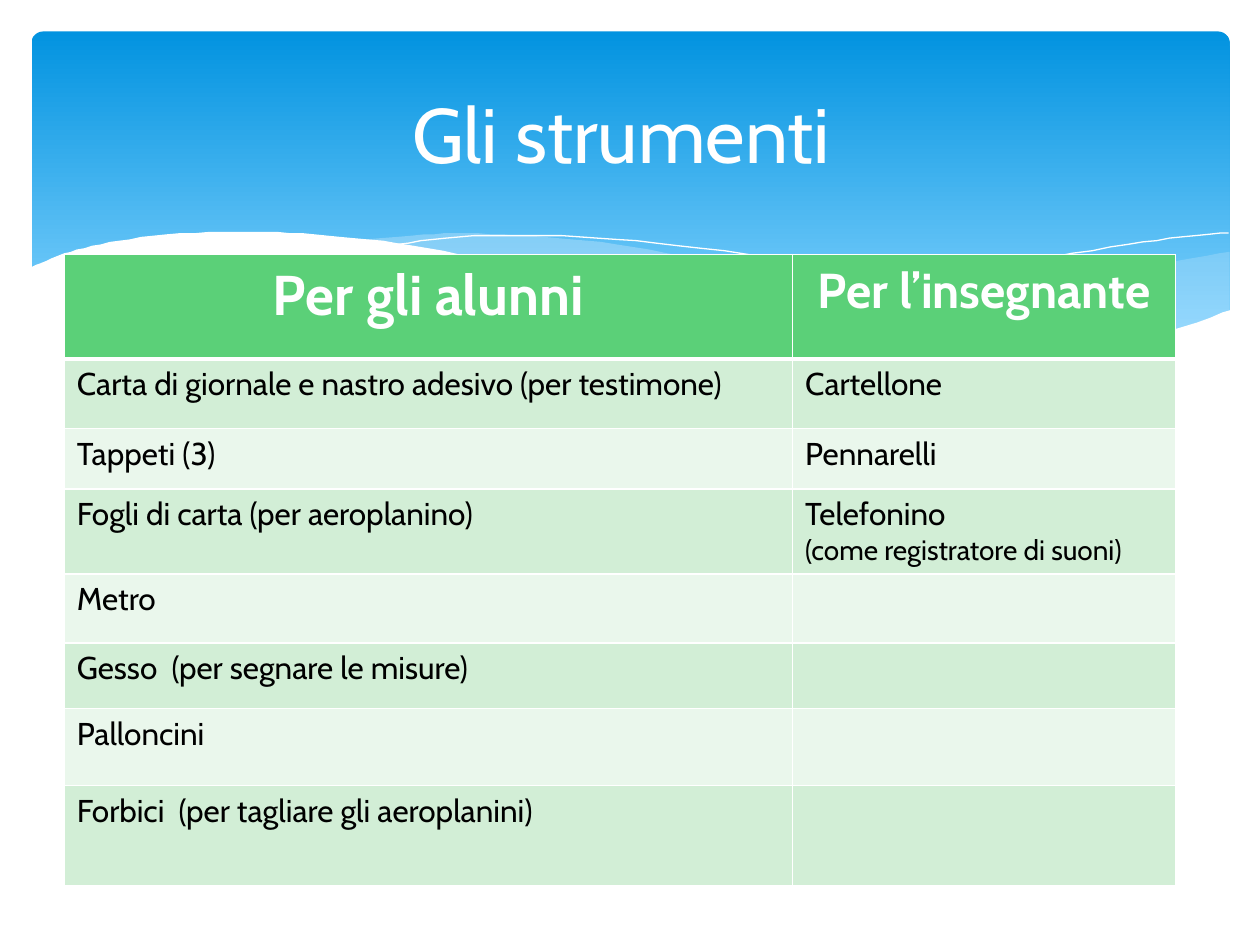
from lxml.etree import SubElement
from pptx import Presentation
from pptx.dml.color import RGBColor
from pptx.enum.shapes import MSO_SHAPE
from pptx.enum.text import MSO_ANCHOR, PP_ALIGN
from pptx.oxml import parse_xml
from pptx.oxml.ns import nsdecls, qn
from pptx.util import Pt

SCALE = 9144
FONT = "Cabin"
COLORS = {
    "sky_top": "0293E0",
    "sky_bottom": "83D3FE",
    "mist": "C6E7FC",
    "white": "FFFFFF",
    "black": "000000",
    "header": "5BD078",
    "odd_row": "D2EED6",
    "even_row": "EAF7EC",
}

RIGHT_WAVE = [
    (950, 175), (910, 182), (866, 191), (836, 198), (780, 212), (728, 223),
    (681, 232), (636, 240), (666, 244), (707, 249), (756, 252), (799, 252),
    (838, 250), (872, 245), (903, 238), (924, 232), (951, 222),
]
MIDDLE_WAVE = [
    (868, 248), (812, 240), (750, 229), (681, 215), (604, 197), (559, 186),
    (516, 178), (464, 169), (417, 164), (374, 161), (336, 160), (303, 162),
    (261, 166), (298, 171), (358, 182), (424, 197), (505, 215), (576, 230),
    (640, 241), (697, 249), (748, 252), (793, 253), (832, 252), (868, 248),
]
LONG_LINE = [
    (284, 170), (319, 165), (362, 162), (408, 162), (464, 165), (531, 172),
    (611, 183), (702, 201), (770, 216), (844, 236), (882, 247),
]
RIGHT_LINE = [
    (588, 232), (628, 221), (695, 204), (751, 191), (811, 179), (870, 169),
    (913, 163), (950, 160),
]
WHITE_WAVE = [
    (952, 221), (915, 234), (874, 244), (825, 250), (784, 252), (719, 249),
    (643, 240), (554, 225), (478, 208), (422, 195), (366, 182), (315, 172),
    (267, 165), (225, 161), (186, 159), (152, 159), (107, 161), (70, 166),
    (42, 172), (21, 178), (4, 185), (-2, 188),
]

COLUMNS = [578, 304]
ROWS = [83, 55, 48, 67, 55, 52, 61, 80]
HEADERS = [("Per gli alunni", 32), ("Per l’insegnante", 28)]
TOOLS = [
    ("Carta di giornale e nastro adesivo (per testimone)", "Cartellone"),
    ("Tappeti (3)", "Pennarelli"),
    ("Fogli di carta (per aeroplanino)", "Telefonino\n(come registratore di suoni)"),
    ("Metro", ""),
    ("Gesso  (per segnare le misure)", ""),
    ("Palloncini", ""),
    ("Forbici  (per tagliare gli aeroplanini)", ""),
]


def px(value):
    return round(value * SCALE)


def rgb(name):
    return RGBColor.from_string(COLORS[name])


def format_paragraph(para, size, color, bold=False, align=PP_ALIGN.LEFT):
    para.alignment = align
    for span in para.runs:
        span.font.name = FONT
        span.font.size = Pt(size)
        span.font.bold = bold
        span.font.color.rgb = rgb(color)


def smooth(points, steps=4):
    padded = [points[0], *points, points[-1]]
    curve = [points[0]]
    for a, b, c, d in zip(padded, padded[1:], padded[2:], padded[3:]):
        for step in range(1, steps + 1):
            t = step / steps
            curve.append(tuple(
                (2 * q + (r - p) * t + (2 * p - 5 * q + 4 * r - s) * t**2
                 + (3 * q - p - 3 * r + s) * t**3) / 2
                for p, q, r, s in zip(a, b, c, d)
            ))
    return curve


def add_outline(page, box, points, corners=(), close=True):
    left, top = box[:2]
    placed = [(left + x, top + y) for x, y in [*smooth(points), *corners]]
    builder = page.shapes.build_freeform(*placed[0], scale=SCALE)
    builder.add_line_segments(placed[1:], close=close)
    outline = builder.convert_to_shape()
    outline.shadow.inherit = False
    return outline


def add_wave(page, box, points, color, opacity=100, corners=()):
    wave = add_outline(page, box, points, corners)
    wave.fill.solid()
    wave.fill.fore_color.rgb = rgb(color)
    wave.line.fill.background()
    if opacity < 100:
        fill_color = wave.fill._xPr.find(qn("a:solidFill"))[0]
        SubElement(fill_color, qn("a:alpha"), val=str(opacity * 1000))


def add_thin_line(page, box, points):
    line = add_outline(page, box, points, close=False)
    line.fill.background()
    line.line.color.rgb = rgb("white")
    line.line.width = Pt(0)


def add_backdrop(page, box):
    sky = page.shapes.add_shape(MSO_SHAPE.ROUNDED_RECTANGLE, *map(px, box))
    sky.adjustments[0] = 0.034
    sky.shadow.inherit = False
    sky.line.fill.background()
    sky.fill.gradient()
    sky.fill.gradient_angle = 270
    stops = zip(sky.fill.gradient_stops, ("sky_top", "sky_bottom"), (0, 0.9))
    for stop, color, position in stops:
        stop.color.rgb = rgb(color)
        stop.position = position

    add_wave(page, box, RIGHT_WAVE, "mist", 29, [(951, 175)])
    add_wave(page, box, MIDDLE_WAVE, "mist", 40)
    add_thin_line(page, box, LONG_LINE)
    add_thin_line(page, box, RIGHT_LINE)
    add_wave(page, box, WHITE_WAVE, "white", corners=[(-2, 304), (952, 304)])


def place_title(page, box, text):
    title = page.shapes.title
    page.shapes._spTree.append(title._element)
    title.left, title.top, title.width, title.height = map(px, box)
    title.text_frame.text = text
    title.text_frame.vertical_anchor = MSO_ANCHOR.MIDDLE
    format_paragraph(title.text_frame.paragraphs[0], 44, "white", align=PP_ALIGN.CENTER)


def format_cell(cell, fill, top_width, bottom_width):
    cell.fill.solid()
    cell.fill.fore_color.rgb = rgb(fill)
    widths = {"lnL": 1, "lnR": 1, "lnT": top_width, "lnB": bottom_width}
    for index, (side, width) in enumerate(widths.items()):
        border = parse_xml(
            f'<a:{side} {nsdecls("a")} w="{Pt(width)}"><a:solidFill>'
            f'<a:srgbClr val="{COLORS["white"]}"/></a:solidFill></a:{side}>'
        )
        cell._tc.get_or_add_tcPr().insert(index, border)


def add_tools_table(page, box):
    table = page.shapes.add_table(len(ROWS), len(COLUMNS), *map(px, box)).table
    for column, width in zip(table.columns, COLUMNS):
        column.width = px(width)
    for row, height in zip(table.rows, ROWS):
        row.height = px(height)

    for cell, (text, size) in zip(table.rows[0].cells, HEADERS):
        cell.text_frame.text = text
        format_paragraph(cell.text_frame.paragraphs[0], size, "white", True, PP_ALIGN.CENTER)
        format_cell(cell, "header", 1, 3)

    for number, texts in enumerate(TOOLS, 1):
        fill = "odd_row" if number % 2 else "even_row"
        for cell, text in zip(table.rows[number].cells, texts):
            cell.text_frame.text = text
            for index, para in enumerate(cell.text_frame.paragraphs):
                format_paragraph(para, 16 if index else 18, "black")
            format_cell(cell, fill, 3 if number == 1 else 1, 1)


def main():
    deck = Presentation()
    deck.slide_width, deck.slide_height = px(1000), px(750)
    page = deck.slides.add_slide(deck.slide_layouts[5])
    add_backdrop(page, (25, 25, 951, 270))
    place_title(page, (50, 37, 900, 137), "Gli strumenti ")
    add_tools_table(page, (51, 202, sum(COLUMNS), sum(ROWS)))
    deck.save("out.pptx")


if __name__ == "__main__":
    main()
